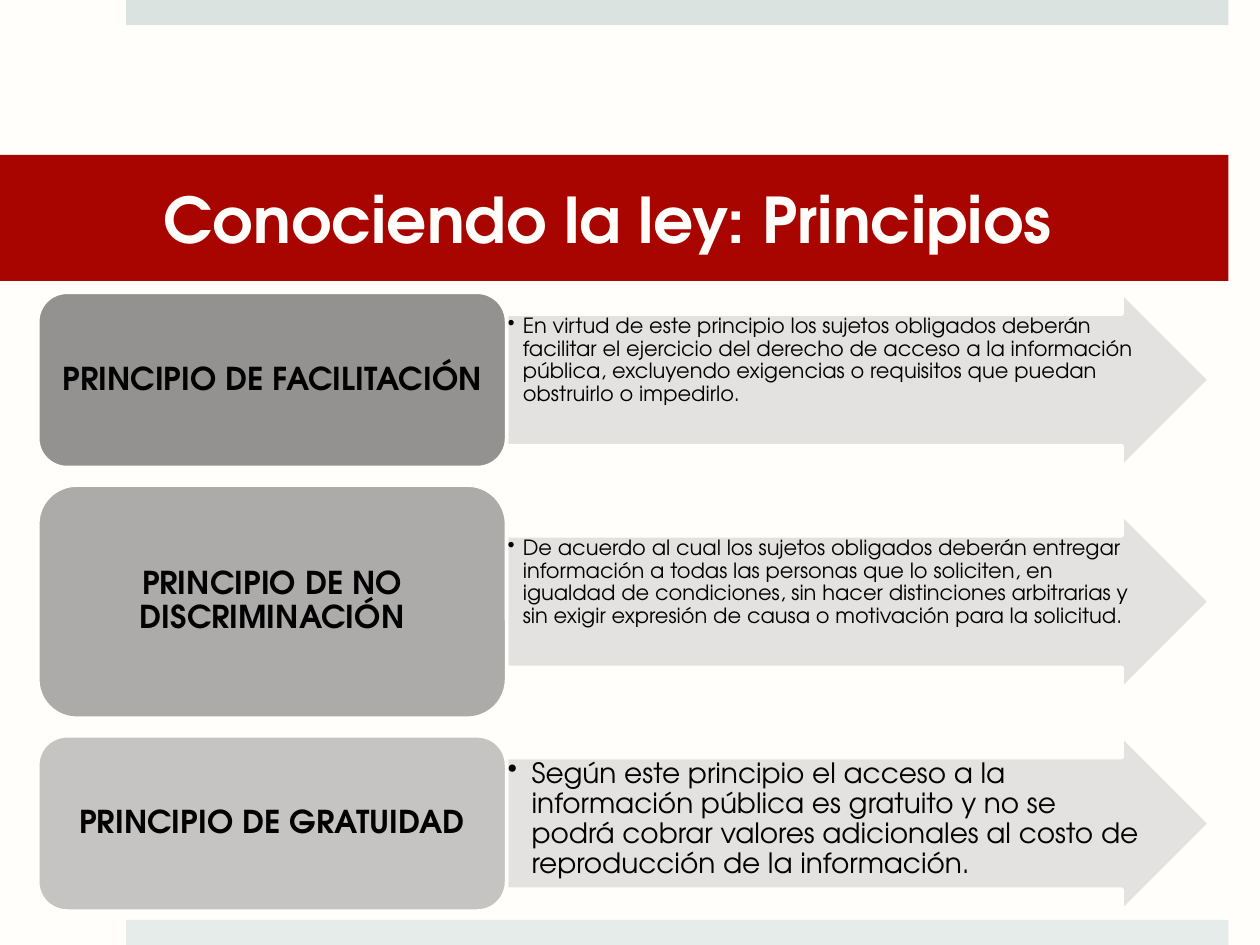
"""Build the slide on the principles of the law: three labels, each with an arrow of explanation."""
from dataclasses import dataclass

from lxml import etree
from pptx import Presentation
from pptx.dml.color import RGBColor
from pptx.enum.shapes import MSO_SHAPE
from pptx.enum.text import MSO_ANCHOR, PP_ALIGN
from pptx.oxml.ns import qn
from pptx.util import Inches, Pt


@dataclass(frozen=True)
class Theme:
    font: str = "TeX Gyre Adventor"
    paper: str = "FFFEFB"
    ink: str = "020202"
    banner: str = "A90500"
    top_strip: str = "DAE3DF"
    bottom_strip: str = "E6ECEA"
    arrow: str = "E0E0DF"
    title_size: int = 36
    label_size: int = 18
    outline: int = 2


theme = Theme()


def add_block(kind, left, top, width, height, color, outlined=False):
    shape = slide.shapes.add_shape(kind, Inches(left), Inches(top), Inches(width), Inches(height))
    shape.shadow.inherit = False
    shape.fill.solid()
    shape.fill.fore_color.rgb = RGBColor.from_string(color)
    if outlined:
        shape.line.color.rgb = RGBColor.from_string(theme.paper)
        shape.line.width = Pt(theme.outline)
    else:
        shape.line.fill.background()
    return shape


def write_text(shape, text, size, color, margins, anchor, alignment, bold=False, indent=0):
    frame = shape.text_frame
    frame.word_wrap = True
    frame.vertical_anchor = anchor
    frame.margin_left, frame.margin_top, frame.margin_right, frame.margin_bottom = map(Inches, margins)
    paragraph = frame.paragraphs[0]
    paragraph.text = text
    paragraph.alignment = alignment
    if indent:
        paragraph.level = 1
        properties = paragraph._p.get_or_add_pPr()
        properties.set("marL", str(Inches(indent)))
        properties.set("indent", str(-Inches(indent)))
        etree.SubElement(properties, qn("a:buChar"), char="•")
    paragraph.font.name = theme.font
    paragraph.font.size = Pt(size)
    paragraph.font.bold = bold
    paragraph.font.color.rgb = RGBColor.from_string(color)
    return paragraph


presentation = Presentation()
presentation.slide_width, presentation.slide_height = Inches(10), Inches(7.5)
slide = presentation.slides.add_slide(presentation.slide_layouts[6])
slide.background.fill.solid()
slide.background.fill.fore_color.rgb = RGBColor.from_string(theme.paper)

add_block(MSO_SHAPE.RECTANGLE, 1, 0, 8.75, 0.2, theme.top_strip)
add_block(MSO_SHAPE.RECTANGLE, 1, 7.3, 8.75, 0.2, theme.bottom_strip)
banner = add_block(MSO_SHAPE.RECTANGLE, 0, 1.23, 9.75, 1, theme.banner)
write_text(banner, "Conociendo la ley: Principios", theme.title_size, theme.paper,
           (1.3, 0.05, 0.3, 0.05), MSO_ANCHOR.MIDDLE, PP_ALIGN.LEFT, bold=True)

principles = [
    ("PRINCIPIO DE FACILITACIÓN", "939290", 1.39, 12, 0.12,
     "En virtud de este principio los sujetos obligados deberán facilitar el ejercicio del derecho "
     "de acceso a la información pública, excluyendo exigencias o requisitos que puedan "
     "obstruirlo o impedirlo."),
    ("PRINCIPIO DE NO DISCRIMINACIÓN", "ACABAA", 1.85, 12, 0.12,
     "De acuerdo al cual los sujetos obligados deberán entregar información a todas las personas "
     "que lo soliciten, en igualdad de condiciones, sin hacer distinciones arbitrarias y sin "
     "exigir expresión de causa o motivación para la solicitud."),
    ("PRINCIPIO DE GRATUIDAD", "C5C4C3", 1.39, 16, 0.19,
     "Según este principio el acceso a la información pública es gratuito y no se podrá cobrar "
     "valores adicionales al costo de reproducción de la información."),
]
first_top, row_step = 2.32, 1.76
label_left, label_width = 0.3, 3.72
arrow_left, arrow_width, arrow_height = label_left + label_width, 5.58, 1.39

for row, (label, color, label_height, size, indent, explanation) in enumerate(principles):
    arrow_top = first_top + row * row_step
    arrow = add_block(MSO_SHAPE.RIGHT_ARROW, arrow_left, arrow_top, arrow_width, arrow_height,
                      theme.arrow, outlined=True)
    arrow.adjustments[0], arrow.adjustments[1] = 0.75, 0.5
    fill_color = arrow._element.spPr.find(qn("a:solidFill"))[0]
    etree.SubElement(fill_color, qn("a:alpha"), val="90000")

    explanation_box = slide.shapes.add_textbox(
        Inches(arrow_left), Inches(arrow_top + arrow_height / 8), Inches(5.06), Inches(arrow_height * 0.75))
    paragraph = write_text(explanation_box, explanation, size, theme.ink, (0.01,) * 4,
                           MSO_ANCHOR.TOP, PP_ALIGN.LEFT, indent=indent)
    paragraph.line_spacing = 0.9

    label_top = arrow_top + (arrow_height - label_height) / 2
    add_block(MSO_SHAPE.ROUNDED_RECTANGLE, label_left, label_top, label_width, label_height,
              color, outlined=True)
    inset = label_height * 0.05
    label_box = slide.shapes.add_textbox(
        Inches(label_left + inset), Inches(label_top + inset),
        Inches(label_width - 2 * inset), Inches(label_height - 2 * inset))
    paragraph = write_text(label_box, label, theme.label_size, theme.ink, (0.07, 0.04, 0.07, 0.04),
                           MSO_ANCHOR.MIDDLE, PP_ALIGN.CENTER, bold=True)
    paragraph.line_spacing = 0.9

presentation.save("out.pptx")
